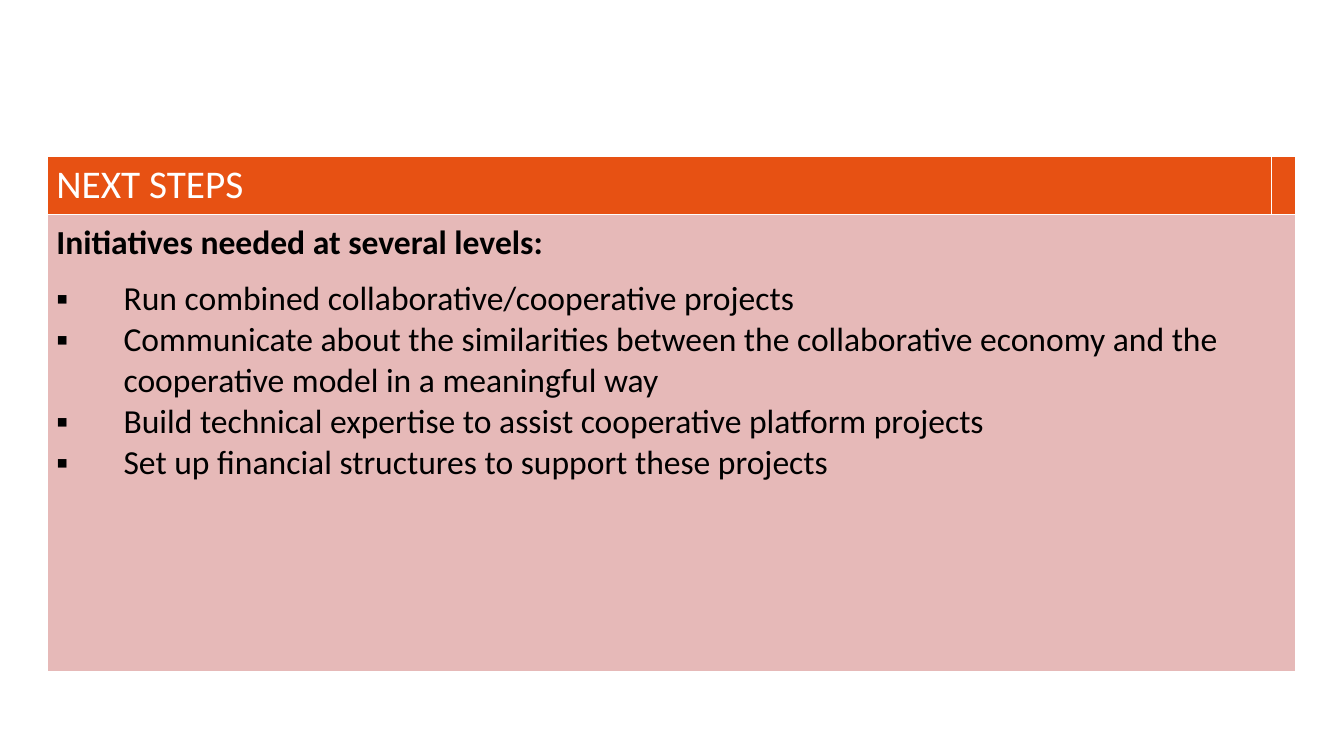
import pptx
import pptx.dml.color
import pptx.oxml
import pptx.oxml.ns
import pptx.table
import pptx.text.text
import pptx.util
import dataclasses
from pptx.util import Inches

WHITE = pptx.dml.color.RGBColor(0xFF, 0xFF, 0xFF)
BLACK = pptx.dml.color.RGBColor(0x00, 0x00, 0x00)
ORANGE = pptx.dml.color.RGBColor(0xE7, 0x51, 0x13)
PINK = pptx.dml.color.RGBColor(0xE6, 0xB9, 0xB8)
FONT = "Calibri"


@dataclasses.dataclass
class TableRow:
    height: float
    fill: pptx.dml.color.RGBColor


ROWS = [TableRow(0.42, ORANGE), TableRow(3.4, PINK)]
COLUMN_WIDTHS = [9.11, 0.18]
STEPS = [
    "Run combined collaborative/cooperative projects",
    "Communicate about the similarities between the collaborative economy "
    "and the cooperative model in a meaningful way",
    "Build technical expertise to assist cooperative platform projects",
    "Set up financial structures to support these projects",
]


def add_border(cell: pptx.table._Cell, side: str) -> None:
    """Draw one white edge of a cell; call before the fill is set."""
    cell._tc.get_or_add_tcPr().append(pptx.oxml.parse_xml(
        f'<a:{side} {pptx.oxml.ns.nsdecls("a")} w="{pptx.util.Pt(1)}">'
        f'<a:solidFill><a:srgbClr val="{WHITE}"/></a:solidFill></a:{side}>'))


def style_cell(cell: pptx.table._Cell, fill: pptx.dml.color.RGBColor) -> None:
    cell.margin_left = cell.margin_right = Inches(0.07)
    cell.margin_top = cell.margin_bottom = Inches(0.04)
    for side in ("lnL", "lnR", "lnT", "lnB"):
        add_border(cell, side)
    cell.fill.solid()
    cell.fill.fore_color.rgb = fill


def add_bullet(para: pptx.text.text._Paragraph) -> None:
    properties = para._p.get_or_add_pPr()
    properties.set("marL", str(Inches(0.5)))
    properties.set("indent", str(-Inches(0.5)))
    for element in (f'buFont {{}} typeface="{FONT}"', 'buChar {} char="▪"'):
        namespace = pptx.oxml.ns.nsdecls("a")
        properties.append(
            pptx.oxml.parse_xml(f"<a:{element.format(namespace)}/>"))


def write(para: pptx.text.text._Paragraph, text: str, *, size: float = 18,
          color: pptx.dml.color.RGBColor = BLACK, bold: bool = False,
          bullet: bool = False) -> None:
    if bullet:
        add_bullet(para)
    span = para.add_run()
    span.text = text
    span.font.name = FONT
    span.font.size = pptx.util.Pt(size)
    span.font.bold = bold
    span.font.color.rgb = color


def main() -> None:
    # Widescreen 16:9 page
    deck = pptx.Presentation()
    deck.slide_width = Inches(10)
    deck.slide_height = deck.slide_width * 9 // 16
    page = deck.slides.add_slide(deck.slide_layouts[6])

    # Table grid
    table = page.shapes.add_table(
        len(ROWS), len(COLUMN_WIDTHS), Inches(0.35), Inches(1.16),
        Inches(sum(COLUMN_WIDTHS)),
        Inches(sum(row.height for row in ROWS))).table
    table.first_row = table.horz_banding = False
    for column, width in zip(table.columns, COLUMN_WIDTHS):
        column.width = Inches(width)
    for row, design in zip(table.rows, ROWS):
        row.height = Inches(design.height)
        for cell in row.cells:
            style_cell(cell, design.fill)
    table.cell(1, 0).merge(table.cell(1, 1))

    # Header row
    write(table.cell(0, 0).text_frame.paragraphs[0], "NEXT STEPS",
          size=21, color=WHITE)

    # Body row: lead line and bulleted steps
    body = table.cell(1, 0).text_frame
    lead = body.paragraphs[0]
    lead.line_spacing = 1.07
    lead.space_after = pptx.util.Pt(8)
    write(lead, "Initiatives needed at several levels:", bold=True)
    for step in STEPS:
        write(body.add_paragraph(), step, bullet=True)

    deck.save("out.pptx")


if __name__ == "__main__":
    main()
